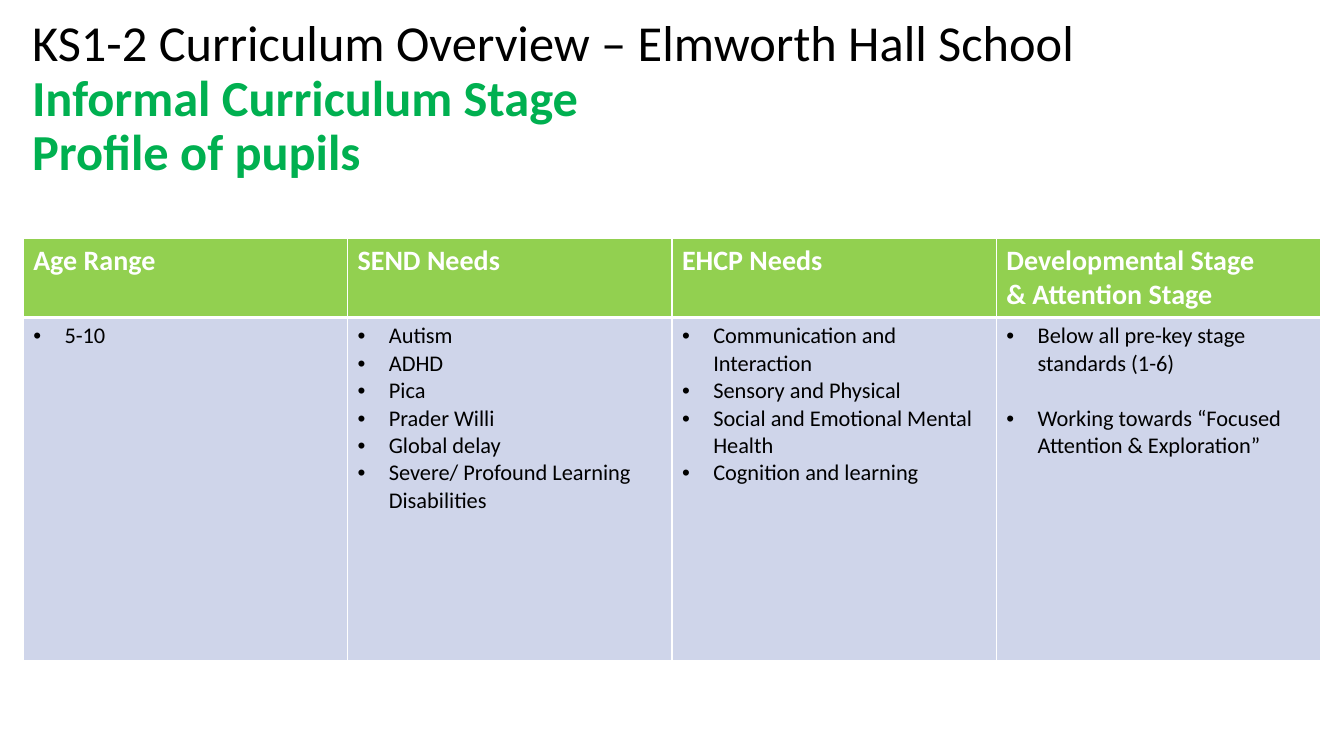
from lxml import etree
from pptx import Presentation
from pptx.dml.color import RGBColor
from pptx.enum import text as txt
from pptx.oxml import ns
from pptx.util import Inches, Pt

BLACK = RGBColor(0x00, 0x00, 0x00)
WHITE = RGBColor(0xFF, 0xFF, 0xFF)
GREEN = RGBColor(0x00, 0xB0, 0x50)
LIME = RGBColor(0x92, 0xD0, 0x50)
LILAC = RGBColor(0xCF, 0xD5, 0xEA)

PLAIN = {"name": "Calibri", "size": Pt(36), "bold": False, "color": BLACK}
STRONG = {**PLAIN, "bold": True, "color": GREEN}
HEAD = {**STRONG, "size": Pt(20), "color": WHITE}
BODY = {**PLAIN, "size": Pt(16)}

TITLE = [
    ("KS1-2 Curriculum Overview – Elmworth Hall School", PLAIN),
    ("Informal Curriculum Stage", STRONG),
    ("Profile of pupils", STRONG),
]
# Each column: heading lines, bullet items, space before later items
COLUMNS = [
    (["Age Range"], ["5-10"], 0),
    (["SEND Needs"],
     ["Autism", "ADHD", "Pica", "Prader Willi", "Global delay",
      "Severe/ Profound Learning Disabilities"], 0),
    (["EHCP Needs"],
     ["Communication and Interaction", "Sensory and Physical",
      "Social and Emotional Mental Health", "Cognition and learning"], 0),
    (["Developmental Stage", "& Attention Stage"],
     ["Below all pre-key stage standards (1-6)",
      "Working towards “Focused Attention & Exploration”"], 19.5),
]


def style(font, look):
    for key, value in look.items():
        if key == "color":
            font.color.rgb = value
        else:
            setattr(font, key, value)


def add_run(para, words, look):
    run = para.add_run()
    run.text = words
    style(run.font, look)


def add_title(slide, left, top, width, height):
    frame = slide.shapes.add_textbox(left, top, width, height).text_frame
    # The deep bottom margin lifts the centred text by half a line
    layout = {"word_wrap": True, "auto_size": txt.MSO_AUTO_SIZE.NONE,
              "vertical_anchor": txt.MSO_ANCHOR.MIDDLE,
              "margin_bottom": Inches(0.6)}
    for key, value in layout.items():
        setattr(frame, key, value)
    para = frame.paragraphs[0]
    para.line_spacing = 0.9
    for row, (words, look) in enumerate(TITLE):
        if row:
            para.add_line_break()
        add_run(para, words, look)


def add_rules(cell, foot):
    props = cell._tc.get_or_add_tcPr()
    for side, width in (("L", 1), ("R", 1), ("T", 1), ("B", foot)):
        line = etree.SubElement(props, ns.qn("a:ln" + side), w=str(Pt(width)))
        fill = etree.SubElement(line, ns.qn("a:solidFill"))
        etree.SubElement(fill, ns.qn("a:srgbClr"), val=str(WHITE))


def add_bullet(para):
    props = para._p.get_or_add_pPr()
    indent = Inches(0.31)
    props.set("marL", str(indent))
    props.set("indent", str(-indent))
    etree.SubElement(props, ns.qn("a:buFont"), typeface="Arial")
    etree.SubElement(props, ns.qn("a:buChar"), char="•")


def fill_cell(cell, lines, look, color, foot, gap=0, bullet=False):
    add_rules(cell, foot)
    cell.fill.solid()
    cell.fill.fore_color.rgb = color
    frame = cell.text_frame
    for row, words in enumerate(lines):
        para = frame.add_paragraph() if row else frame.paragraphs[0]
        if row and gap:
            para.space_before = Pt(gap)
        if bullet:
            add_bullet(para)
        add_run(para, words, look)


def add_profile(slide, left, top, width, height):
    count = len(COLUMNS)
    table = slide.shapes.add_table(2, count, left, top, width, height).table
    head = Inches(0.77)
    table.rows[0].height = head
    table.rows[1].height = height - head
    for col, (heads, items, gap) in enumerate(COLUMNS):
        table.columns[col].width = width // count
        fill_cell(table.cell(0, col), heads, HEAD, LIME, 3)
        fill_cell(table.cell(1, col), items, BODY, LILAC, 1, gap, True)


def main():
    deck = Presentation()
    deck.slide_width, deck.slide_height = Inches(13.33), Inches(7.5)
    slide = deck.slides.add_slide(deck.slide_layouts[6])
    add_title(slide, Inches(0.22), Inches(0.54), Inches(11.5), Inches(1.45))
    add_profile(slide, Inches(0.23), Inches(2.37), Inches(12.87), Inches(4.17))
    deck.save("out.pptx")


if __name__ == "__main__":
    main()
